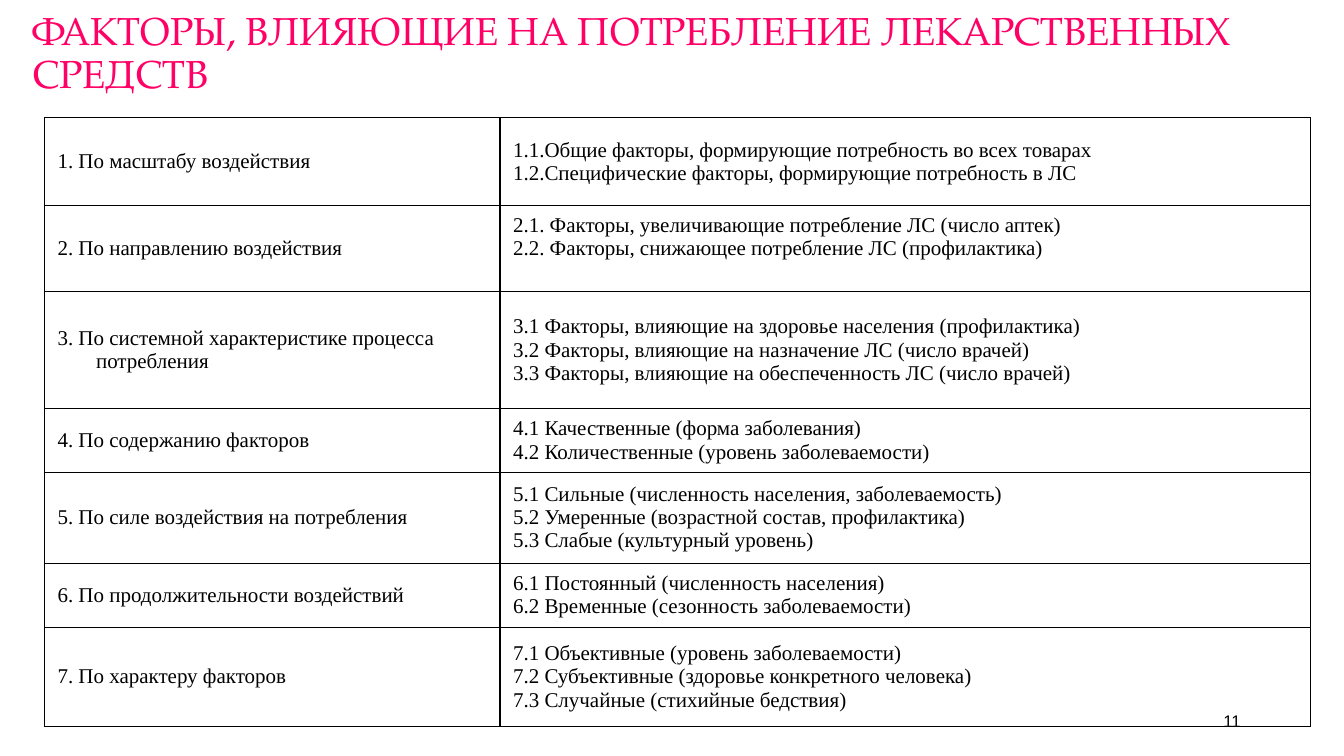
from lxml.etree import SubElement
from pptx import Presentation
from pptx.dml.color import RGBColor
from pptx.enum.text import MSO_ANCHOR, PP_ALIGN
from pptx.oxml import parse_xml
from pptx.oxml.ns import nsdecls, qn
from pptx.util import Cm, Pt

COLORS = {"title": "FF0066", "text": "000000", "line": "000000", "cell": "FFFFFF"}
COLUMN_WIDTHS = [11.48, 20.42]
HANGING = Cm(0.97)

# Row height, factor group, factors
FACTORS = [
    (2.21, "1. По масштабу воздействия",
     ["1.1.Общие факторы, формирующие потребность во всех товарах",
      "1.2.Специфические факторы, формирующие потребность в ЛС"]),
    (2.16, "2. По направлению воздействия",
     ["2.1. Факторы, увеличивающие потребление ЛС (число аптек)",
      "2.2. Факторы, снижающее потребление ЛС (профилактика)"]),
    (2.96, "3. По системной характеристике процесса потребления",
     ["3.1 Факторы, влияющие на здоровье населения (профилактика)",
      "3.2 Факторы, влияющие на назначение ЛС (число врачей)",
      "3.3 Факторы, влияющие на обеспеченность ЛС (число врачей)"]),
    (1.6, "4. По содержанию факторов",
     ["4.1 Качественные (форма заболевания)",
      "4.2 Количественные (уровень заболеваемости)"]),
    (2.29, "5. По силе воздействия на потребления",
     ["5.1 Сильные (численность населения, заболеваемость)",
      "5.2 Умеренные (возрастной состав, профилактика)",
      "5.3 Слабые (культурный уровень)"]),
    (1.62, "6. По продолжительности воздействий",
     ["6.1 Постоянный (численность населения)",
      "6.2 Временные (сезонность заболеваемости)"]),
    (2.49, "7. По характеру факторов",
     ["7.1 Объективные (уровень заболеваемости)",
      "7.2 Субъективные (здоровье конкретного человека)",
      "7.3 Случайные (стихийные бедствия)"]),
]


def style_font(font, name, size, color):
    font.name = name
    font.size = Pt(size)
    font.color.rgb = RGBColor.from_string(COLORS[color])


def add_label(s, box, text, name, size, color, align=PP_ALIGN.LEFT, spacing=1.0):
    """Single-paragraph text, centred vertically in its box."""
    tf = s.shapes.add_textbox(*map(Cm, box)).text_frame
    tf.word_wrap = True
    tf.vertical_anchor = MSO_ANCHOR.MIDDLE
    tf.text = text
    p = tf.paragraphs[0]
    p.alignment = align
    p.line_spacing = spacing
    style_font(p.runs[0].font, name, size, color)


def add_borders(cell):
    tcPr = cell._tc.get_or_add_tcPr()
    for i, side in enumerate(("lnL", "lnR", "lnT", "lnB")):
        tcPr.insert(i, parse_xml(
            f'<a:{side} {nsdecls("a")} w="{Pt(1)}"><a:solidFill>'
            f'<a:srgbClr val="{COLORS["line"]}"/></a:solidFill></a:{side}>'))


def fill_cell(cell, lines):
    cell.fill.solid()
    cell.fill.fore_color.rgb = RGBColor.from_string(COLORS["cell"])
    add_borders(cell)
    cell.vertical_anchor = MSO_ANCHOR.MIDDLE
    cell.margin_left = cell.margin_right = Cm(0.33)
    cell.margin_top = cell.margin_bottom = Cm(0.13)
    cell.text_frame.text = "\n".join(lines)
    for p in cell.text_frame.paragraphs:
        pPr = p._p.get_or_add_pPr()
        pPr.set("marL", str(HANGING))
        pPr.set("indent", str(-HANGING))
        style_font(p.runs[0].font, "Times New Roman", 15, "text")


def add_tab_stop(p, position):
    tabs = SubElement(p._p.get_or_add_pPr(), qn("a:tabLst"))
    SubElement(tabs, qn("a:tab"), pos=str(position), algn="l")


def add_factor_table(s, left, top):
    height = sum(row[0] for row in FACTORS)
    box = (left, top, sum(COLUMN_WIDTHS), height)
    table = s.shapes.add_table(len(FACTORS), len(COLUMN_WIDTHS), *map(Cm, box)).table
    table.first_row = table.horz_banding = False
    for column, width in zip(table.columns, COLUMN_WIDTHS):
        column.width = Cm(width)
    for i, (row_height, group, factors) in enumerate(FACTORS):
        table.rows[i].height = Cm(row_height)
        fill_cell(table.cell(i, 0), [group])
        fill_cell(table.cell(i, 1), factors)
    # The factors of direction sit above the middle of their row
    direction = table.cell(1, 1)
    direction.margin_bottom = Cm(0.7)
    for p in direction.text_frame.paragraphs:
        add_tab_stop(p, Cm(8.43))


def main():
    prs = Presentation()
    prs.slide_width, prs.slide_height = Cm(33.87), Cm(19.05)
    s = prs.slides.add_slide(prs.slide_layouts[6])

    # Title
    add_label(s, (0.56, 0, 32.74, 2.74),
              "ФАКТОРЫ, ВЛИЯЮЩИЕ НА ПОТРЕБЛЕНИЕ ЛЕКАРСТВЕННЫХ СРЕДСТВ",
              "TeX Gyre Pagella", 28, "title", spacing=0.9)
    # Factors
    add_factor_table(s, 1.12, 2.97)
    # Slide number
    add_label(s, (28.85, 17.65, 2.67, 1.02), "11", "Arial", 12, "text", PP_ALIGN.RIGHT)

    prs.save("out.pptx")


if __name__ == "__main__":
    main()
